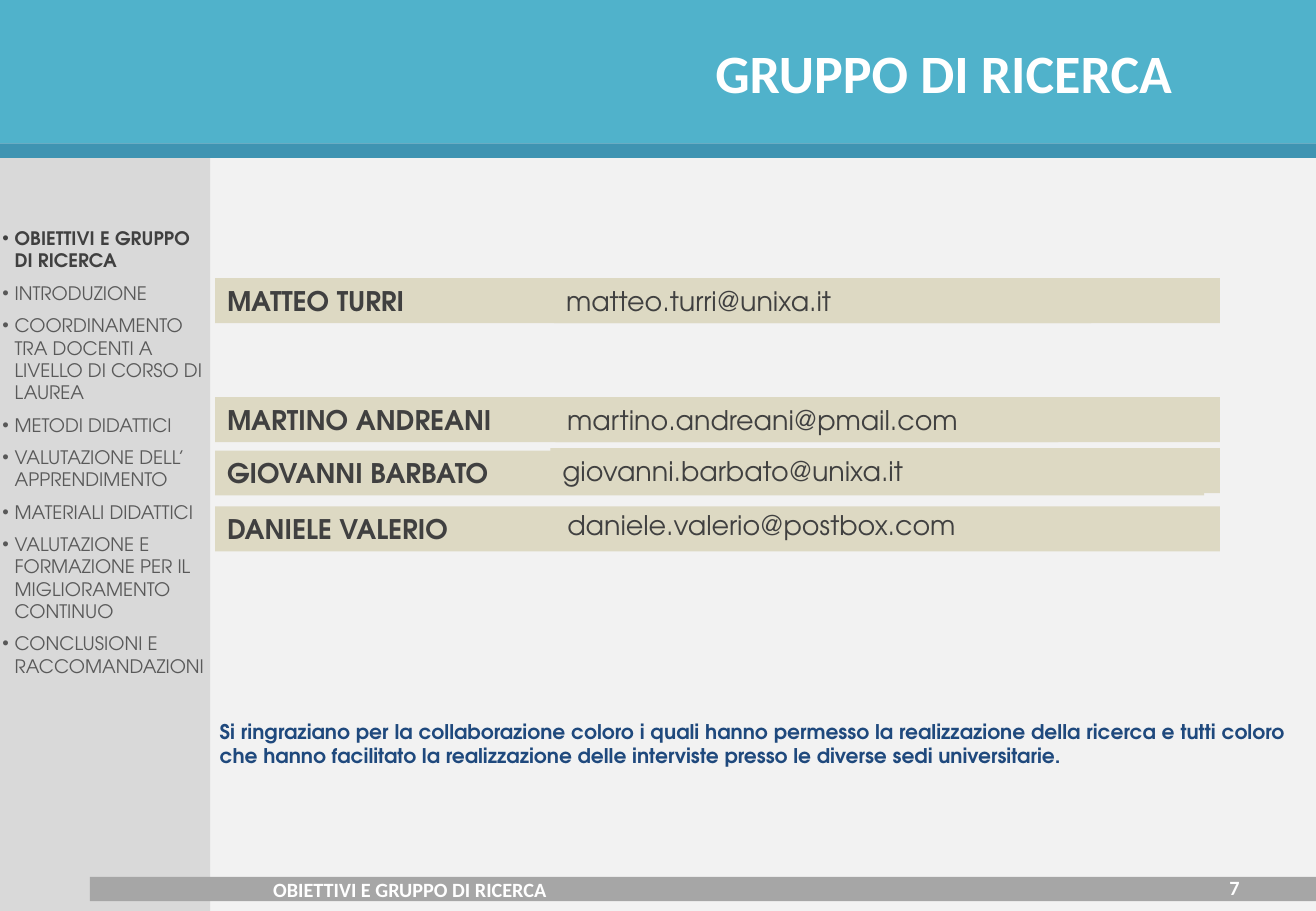
import pptx
import pptx.util
import pptx.dml.color
import pptx.enum.shapes
import pptx.enum.text

PX = 9144
HUES = {
    "page": "F2F2F2", "side": "D9D9D9", "head": "50B2CB", "band": "3F94B2",
    "foot": "A6A6A6", "sand": "DDD9C3", "dark": "404040", "soft": "595959",
    "navy": "1F497D", "white": "FFFFFF",
}
SANS = "Calibri"
GEO = "TeX Gyre Adventor"
ALIGN = pptx.enum.text.PP_ALIGN
ANCHOR = pptx.enum.text.MSO_ANCHOR


class Deck:
    """Draws styled elements on the current slide."""

    def __init__(self, wide, high):
        self.file = pptx.Presentation()
        self.file.slide_width = wide * PX
        self.file.slide_height = high * PX
        self.slide = self.file.slides.add_slide(self.file.slide_layouts[1])
        self.shapes = self.slide.shapes
        self.paint(self.slide.background.fill, "page")

    def paint(self, fill, hue):
        fill.solid()
        fill.fore_color.rgb = pptx.dml.color.RGBColor.from_string(HUES[hue])

    def place(self, item, box):
        item.left, item.top, item.width, item.height = [n * PX for n in box]

    def frame(self, item, anchor=ANCHOR.TOP):
        text = item.text_frame
        text.auto_size = pptx.enum.text.MSO_AUTO_SIZE.NONE
        text.word_wrap = True
        text.vertical_anchor = anchor
        return text

    def words(self, para, line, size, hue, face=GEO, bold=True, align=ALIGN.LEFT):
        para.alignment = align
        run = para.add_run()
        run.text = line
        run.font.size = pptx.util.Pt(size)
        run.font.name = face
        run.font.bold = bold
        run.font.color.rgb = pptx.dml.color.RGBColor.from_string(HUES[hue])

    def rect(self, box, hue, home=None):
        kind = pptx.enum.shapes.MSO_SHAPE.RECTANGLE
        item = (home or self.shapes).add_shape(kind, *[n * PX for n in box])
        item.shadow.inherit = False
        self.paint(item.fill, hue)
        item.line.fill.background()
        return item

    def label(self, box, line, size, hue, fill=None, home=None,
              anchor=ANCHOR.TOP, **style):
        if fill:
            item = self.rect(box, fill, home)
        else:
            item = (home or self.shapes).add_textbox(*[n * PX for n in box])
        text = self.frame(item, anchor)
        self.words(text.paragraphs[0], line, size, hue, **style)

    def title(self, box, line, inset):
        item = self.shapes.title
        self.place(item, box)
        self.paint(item.fill, "head")
        text = self.frame(item, ANCHOR.MIDDLE)
        text.margin_right = inset * PX
        self.words(text.paragraphs[0], line, 32, "white", SANS, align=ALIGN.RIGHT)

    def menu(self, box, topics, active):
        item = self.slide.placeholders[1]
        self.place(item, box)
        item.element.getparent().append(item.element)
        text = self.frame(item)
        for rank, topic in enumerate(topics):
            para = text.add_paragraph() if rank else text.paragraphs[0]
            props = para._p.get_or_add_pPr()
            props.set("marL", str(10 * PX))
            props.set("indent", str(-10 * PX))
            para.space_before = pptx.util.Pt(0)
            para.space_after = pptx.util.Pt(6)
            here = topic == active
            self.words(para, topic, 11, "dark" if here else "soft", bold=here)

    def member(self, name, bar, mail, spot, fill):
        home = self.shapes.add_group_shape().shapes
        self.label(bar, name, 16, "dark", "sand", home)
        self.label(spot, mail, 16, "dark", fill, home, bold=False)


def main():
    topic = "OBIETTIVI E GRUPPO DI RICERCA"
    topics = [
        topic, "INTRODUZIONE",
        "COORDINAMENTO TRA DOCENTI A LIVELLO DI CORSO DI LAUREA",
        "METODI DIDATTICI", "VALUTAZIONE DELL’ APPRENDIMENTO",
        "MATERIALI DIDATTICI",
        "VALUTAZIONE E FORMAZIONE PER IL MIGLIORAMENTO CONTINUO",
        "CONCLUSIONI E RACCOMANDAZIONI",
    ]
    team = [
        ("MATTEO TURRI", 229, 827, "matteo.turri@unixa.it", 456, 229, 442, "sand"),
        ("MARTINO ANDREANI", 327, 827, "martino.andreani@pmail.com", 457, 327, 414, "sand"),
        ("GIOVANNI BARBATO", 371, 814, "giovanni.barbato@unixa.it", 453, 369, 551, "sand"),
        ("DANIELE VALERIO", 417, 827, "daniele.valerio@postbox.com", 457, 414, 568, None),
    ]
    thanks = (
        "Si ringraziano per la collaborazione coloro i quali hanno permesso "
        "la realizzazione della ricerca e tutti coloro che hanno facilitato "
        "la realizzazione delle interviste presso le diverse sedi universitarie."
    )
    deck = Deck(1083, 750)
    deck.title((0, 0, 1083, 118), "GRUPPO DI RICERCA", 118)
    deck.rect((0, 122, 173, 628), "side")
    deck.rect((0, 118, 1083, 12), "band")
    deck.rect((74, 722, 1009, 20), "foot")
    deck.label((777, 716, 253, 30), "7", 12, "white", face=SANS,
               anchor=ANCHOR.MIDDLE, align=ALIGN.RIGHT)
    for name, top, wide, mail, left, high, span, fill in team:
        deck.member(name, (177, top, wide, 37), mail, (left, high, span, 37), fill)
    deck.label((171, 587, 897, 50), thanks, 12, "navy", align=ALIGN.JUSTIFY)
    deck.label((215, 717, 387, 30), topic, 12, "white", face=SANS)
    deck.menu((-8, 182, 189, 384), topics, topic)
    deck.file.save("out.pptx")


if __name__ == "__main__":
    main()
